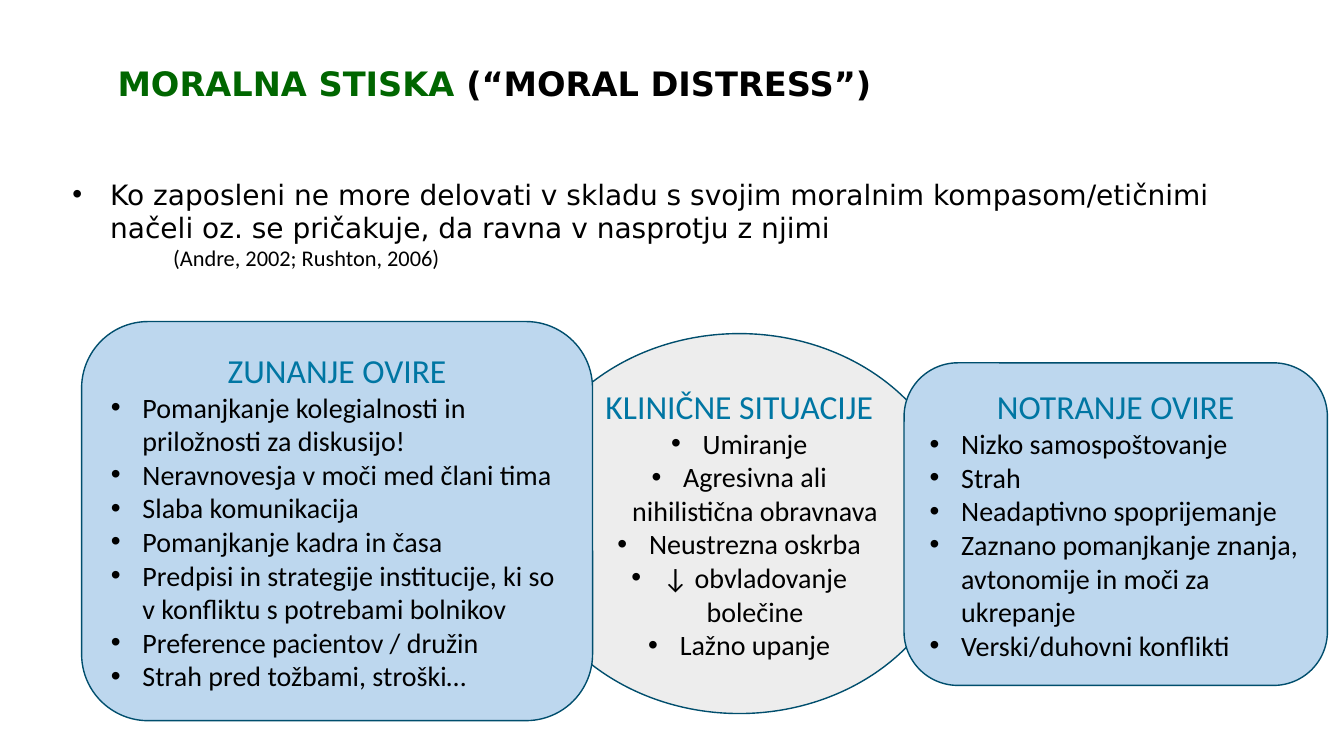
from lxml.etree import SubElement
from pptx import Presentation
from pptx.dml.color import RGBColor
from pptx.enum.shapes import MSO_SHAPE as SHAPE
from pptx.enum.text import MSO_ANCHOR as ANCHOR, PP_ALIGN as ALIGN
from pptx.oxml.ns import qn
from pptx.util import Pt

# Content
TITLE = [("MORALNA STISKA ", "006600"), ("(“MORAL DISTRESS”)", "000000")]
DEFINITION = ("Ko zaposleni ne more delovati v skladu s svojim moralnim kompasom/etičnimi "
              "načeli oz. se pričakuje, da ravna v nasprotju z njimi")
CITATION = "(Andre, 2002; Rushton, 2006)"
# Panels from back to front: heading, items, shape, fill, item alignment, box
PANELS = [
    ("KLINIČNE SITUACIJE",
     ["Umiranje", "Agresivna ali nihilistična obravnava", "Neustrezna oskrba",
      "↓ obvladovanje bolečine", "Lažno upanje"],
     SHAPE.OVAL, "EDEDED", ALIGN.CENTER, (370.8, 238.3, 314.6, 271.4)),
    ("NOTRANJE OVIRE",
     ["Nizko samospoštovanje", "Strah", "Neadaptivno spoprijemanje",
      "Zaznano pomanjkanje znanja, avtonomije in moči za ukrepanje",
      "Verski/duhovni konflikti"],
     SHAPE.ROUNDED_RECTANGLE, "BDD7EE", ALIGN.LEFT, (645.8, 259.2, 302.4, 230.4)),
    ("ZUNANJE OVIRE",
     ["Pomanjkanje kolegialnosti in priložnosti za diskusijo!",
      "Neravnovesja v moči med člani tima", "Slaba komunikacija",
      "Pomanjkanje kadra in časa",
      "Predpisi in strategije institucije, ki so v konfliktu s potrebami bolnikov",
      "Preference pacientov / družin", "Strah pred tožbami, stroški…"],
     SHAPE.ROUNDED_RECTANGLE, "BDD7EE", ALIGN.LEFT, (58.3, 229.7, 365, 285.1)),
]
TITLE_BOX = (-109.4, 41, 925.2, 58.3)
DEFINITION_BOX = (44.6, 123.1, 867.6, 99.4)

# Formats
TITLE_FONT = {"name": "DejaVu Sans", "size": Pt(24), "bold": True}
DEFINITION_FONT = {"name": "DejaVu Sans", "size": Pt(20)}
CITATION_FONT = {"name": "Calibri", "size": Pt(16)}
HEADING_FONT = {"name": "Calibri", "size": Pt(24)}
ITEM_FONT = {"name": "Calibri", "size": Pt(20)}


def color(value):
    return RGBColor.from_string(value)


def add_span(para, text, font, tint="000000"):
    span = para.add_run()
    span.text = text
    for name, value in font.items():
        setattr(span.font, name, value)
    span.font.color.rgb = color(tint)


def indent(para, left, bullet=True):
    properties = para._p.get_or_add_pPr()
    properties.set("marL", str(Pt(left)))
    properties.set("indent", str(-Pt(left) if bullet else 0))
    if bullet:
        SubElement(properties, qn("a:buFont"), typeface="Arial")
        SubElement(properties, qn("a:buChar"), char="•")


deck = Presentation()
deck.slide_width, deck.slide_height = Pt(960), Pt(540)
page = deck.slides.add_slide(deck.slide_layouts[5])

# Title
title = page.shapes.title
title.left, title.top, title.width, title.height = map(Pt, TITLE_BOX)
title.text_frame.vertical_anchor = ANCHOR.TOP
para = title.text_frame.paragraphs[0]
para.alignment = ALIGN.CENTER
for text, tint in TITLE:
    add_span(para, text, TITLE_FONT, tint)

# Panels
for heading, items, kind, fill, alignment, place in PANELS:
    panel = page.shapes.add_shape(kind, *map(Pt, place))
    panel.shadow.inherit = False
    panel.fill.solid()
    panel.fill.fore_color.rgb = color(fill)
    panel.line.color.rgb = color("004E6D")
    panel.line.width = Pt(1)
    frame = panel.text_frame
    frame.word_wrap = True
    frame.vertical_anchor = ANCHOR.MIDDLE
    para = frame.paragraphs[0]
    para.alignment = ALIGN.CENTER
    add_span(para, heading, HEADING_FONT, "0076A3")
    for item in items:
        para = frame.add_paragraph()
        para.alignment = alignment
        indent(para, 22.5)
        add_span(para, item, ITEM_FONT)

# Definition with its citation
box = page.shapes.add_textbox(*map(Pt, DEFINITION_BOX))
frame = box.text_frame
frame.word_wrap = True
para = frame.paragraphs[0]
indent(para, 27)
add_span(para, DEFINITION, DEFINITION_FONT)
para = frame.add_paragraph()
indent(para, 72, bullet=False)
add_span(para, CITATION, CITATION_FONT)

deck.save("out.pptx")
